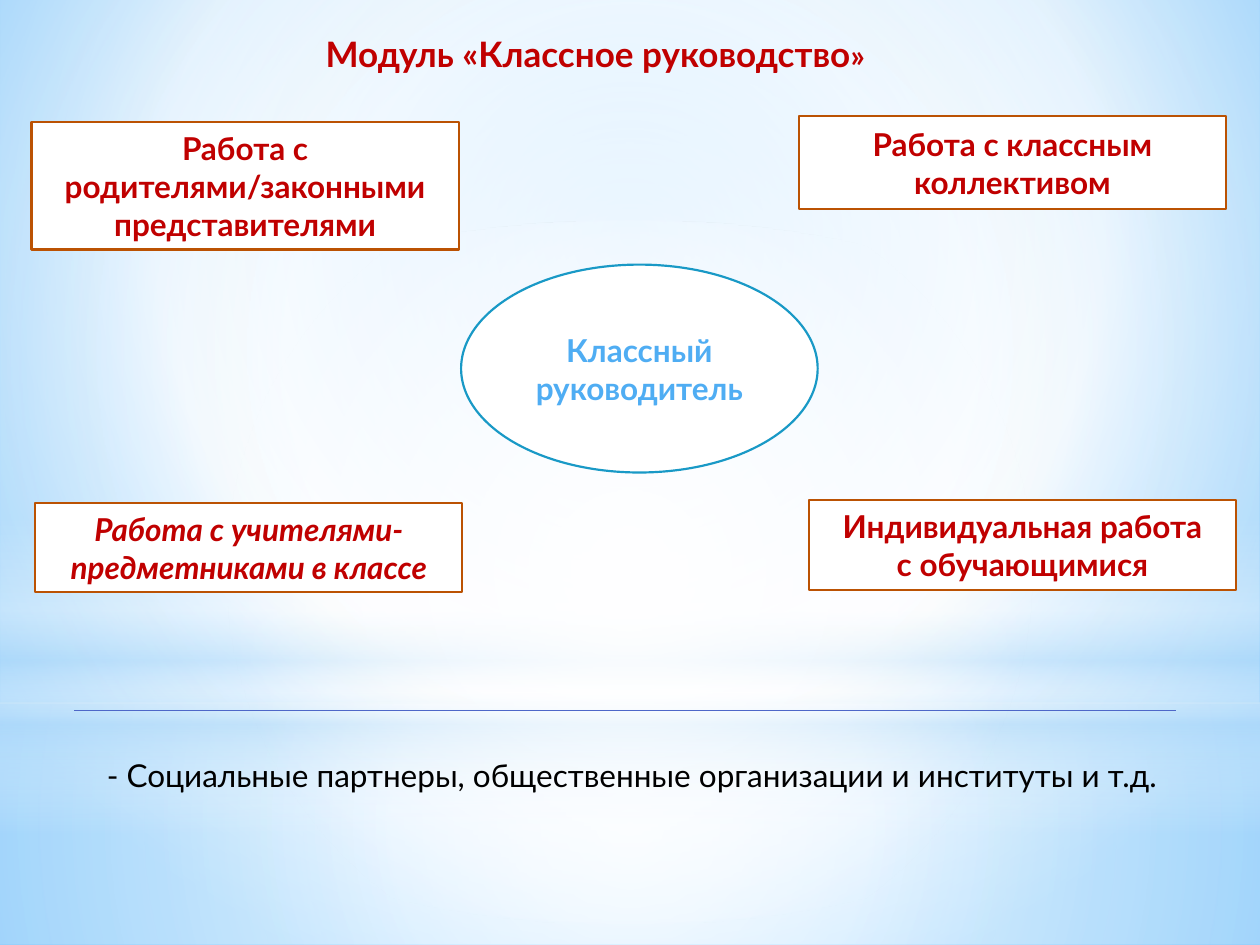
from lxml import etree
from pptx import Presentation
from pptx import util as u
from pptx.dml.color import RGBColor
from pptx.enum import shapes, text
from pptx.oxml import parse_xml
from pptx.oxml.ns import nsdecls, qn

COLORS = {
    "red": "C00000", "orange": "BB5203", "teal": "1999C6", "sky": "4FADF3",
    "rule": "4E67C8", "white": "FFFFFF", "black": "000000", "pale": "B4DCFA",
    "edge": "9ED5FF", "deep": "5BB9FF",
}
CENTER = (50, 50, 50, 50)
RECT = shapes.MSO_SHAPE.RECTANGLE
OVAL = shapes.MSO_SHAPE.OVAL


def rgb(name):
    return RGBColor.from_string(COLORS[name])


class SlideBuilder:
    font = "Lato"
    outline = 1.25

    def __init__(self, page):
        self.page = page

    def gradient(self, stops, focus=None):
        """Gradient of (position, colour, opacity); vertical without a focus."""
        grad = parse_xml(f'<a:gradFill {nsdecls("a")} rotWithShape="1"><a:gsLst/></a:gradFill>')
        for position, color, opacity in stops:
            stop = etree.SubElement(grad[0], qn("a:gs"), pos=str(position * 1000))
            tone = etree.SubElement(stop, qn("a:srgbClr"), val=COLORS[color])
            if opacity < 100:
                etree.SubElement(tone, qn("a:alpha"), val=str(opacity * 1000))
        if focus:
            shade = etree.SubElement(grad, qn("a:path"), path="circle")
            sides = {side: str(value * 1000) for side, value in zip("ltrb", focus)}
            etree.SubElement(shade, qn("a:fillToRect"), sides)
        else:
            etree.SubElement(grad, qn("a:lin"), ang="5400000", scaled="0")
        return grad

    def swap_fill(self, parent, grad):
        solid = parent.find(qn("a:solidFill"))
        parent.replace(solid, grad)

    def background(self, stops, focus):
        self.page.background.fill.solid()
        holder = self.page._element.find(".//" + qn("p:bgPr"))
        self.swap_fill(holder, self.gradient(stops, focus))

    def shape(self, kind, place):
        item = self.page.shapes.add_shape(kind, *map(u.Inches, place))
        item.shadow.inherit = False
        item.fill.solid()
        item.fill.fore_color.rgb = rgb("white")
        return item

    def glow(self, kind, place, stops, focus=None):
        item = self.shape(kind, place)
        item.line.fill.background()
        self.swap_fill(item._element.spPr, self.gradient(stops, focus))

    def set_text(self, frame, lines, color, size=18, bold=True, italic=False,
                 align=text.PP_ALIGN.CENTER, grow=True):
        frame.word_wrap = True
        frame.auto_size = (text.MSO_AUTO_SIZE.SHAPE_TO_FIT_TEXT if grow
                           else text.MSO_AUTO_SIZE.NONE)
        for index, line in enumerate(lines):
            para = frame.paragraphs[0] if index == 0 else frame.add_paragraph()
            para.text = line
            para.alignment = align
            font = para.font
            font.name, font.size = self.font, u.Pt(size)
            font.bold, font.italic = bold, italic
            font.color.rgb = rgb(color)

    def box(self, kind, place, lines, line_color, color, **style):
        item = self.shape(kind, place)
        item.line.color.rgb = rgb(line_color)
        item.line.width = u.Pt(self.outline)
        self.set_text(item.text_frame, lines, color, **style)

    def title(self, place, words, ending):
        item = self.page.shapes.title
        self.page.shapes._spTree.append(item._element)  # in front of the glows
        item.left, item.top, item.width, item.height = map(u.Inches, place)
        item.text_frame.vertical_anchor = text.MSO_ANCHOR.TOP
        self.set_text(item.text_frame, [words], "red", size=20)
        span = item.text_frame.paragraphs[0].add_run()
        span.text = ending
        span.font.size = u.Pt(18)

    def note(self, place, words):
        item = self.page.shapes.add_textbox(*map(u.Inches, place))
        self.set_text(item.text_frame, [words], "black", bold=False,
                      align=text.PP_ALIGN.LEFT)

    def rule(self, left, right, top):
        line = self.page.shapes.add_connector(
            shapes.MSO_CONNECTOR.STRAIGHT, *map(u.Inches, (left, top, right, top)))
        line.line.color.rgb = rgb("rule")
        line.line.width = u.Pt(0.75)
        etree.SubElement(line._element.spPr, qn("a:effectLst"))


def main():
    deck = Presentation()
    deck.slide_width, deck.slide_height = u.Inches(10), u.Inches(7.5)
    builder = SlideBuilder(deck.slides.add_slide(deck.slide_layouts[5]))

    # Background and soft light
    builder.background([(0, "edge", 100), (60, "white", 100), (100, "deep", 100)],
                       (20, 10, 20, 60))
    builder.glow(RECT, (0, 5.58, 10, 1.92),
                 [(0, "white", 91), (37, "white", 76), (100, "pale", 79)], CENTER)
    builder.glow(RECT, (0, 0, 10, 5.58),
                 [(0, "white", 89), (48, "white", 62), (100, "pale", 79)], CENTER)
    builder.glow(RECT, (0, 4.12, 10, 2.5),
                 [(0, "white", 0), (29, "white", 30), (45, "pale", 40),
                  (55, "white", 26), (65, "pale", 60), (100, "white", 0)])
    builder.glow(OVAL, (0, 1.75, 10, 5.58),
                 [(0, "white", 100), (56, "white", 0)], CENTER)

    # Title
    builder.title((0.51, 0.21, 8.43, 0.44), "Модуль «Классное руководство", "»")

    # Areas of work around the class teacher
    areas = [
        ((6.34, 0.92, 3.39, 0.74), ["Работа с классным коллективом"], False),
        ((0.25, 0.97, 3.39, 1.01), ["Работа с родителями/законными представителями"], False),
        ((6.42, 3.97, 3.39, 0.71), ["Индивидуальная работа", "с обучающимися"], False),
        ((0.28, 3.99, 3.39, 0.71), ["Работа с учителями-предметниками в классе"], True),
    ]
    for place, lines, italic in areas:
        builder.box(RECT, place, lines, "orange", "red", italic=italic)
    builder.box(OVAL, (3.66, 2.1, 2.83, 1.65), ["Классный руководитель"],
                "teal", "sky", grow=False)

    # Partners below the rule
    builder.rule(0.59, 9.33, 5.64)
    builder.note((0.75, 5.95, 8.74, 0.4),
                 "- Социальные партнеры, общественные организации и институты и т.д.")

    deck.save("out.pptx")


if __name__ == "__main__":
    main()
